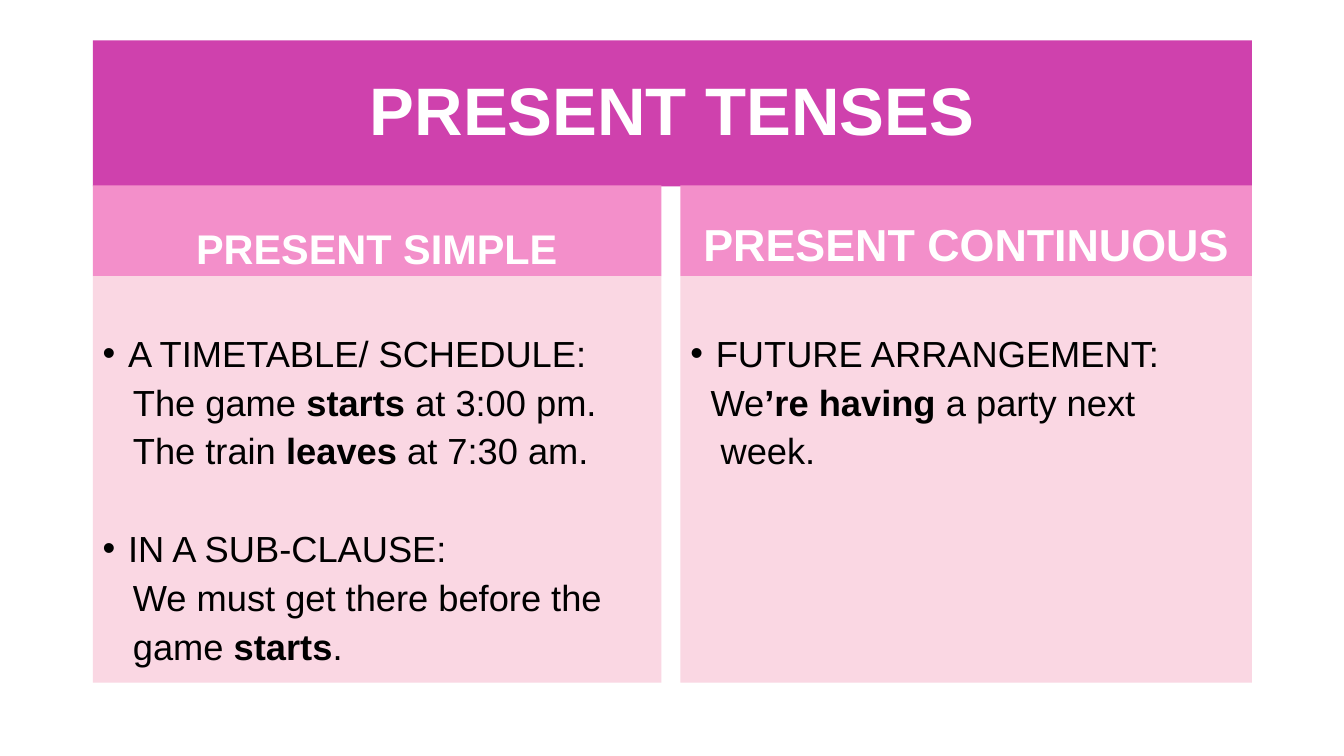
from lxml.etree import SubElement
from pptx import Presentation
from pptx.dml.color import RGBColor
from pptx.enum.shapes import MSO_SHAPE
from pptx.enum.text import MSO_ANCHOR, PP_ALIGN
from pptx.oxml.ns import qn
from pptx.util import Cm, Pt

COLORS = {"title": "CF41AD", "header": "F38FCA", "body": "FAD7E3",
          "light": "FFFFFF", "dark": "000000"}
BULLET = 0.64
SIMPLE = [
    (BULLET, 0, [("A TIMETABLE/ SCHEDULE:", False)]),
    (0.76, 10, [("The game ", False), ("starts ", True), ("at 3:00 pm.", False)]),
    (0.76, 10, [("The train ", False), ("leaves", True), (" at 7:30 am.", False)]),
    (BULLET, 45, [("IN A SUB-CLAUSE:", False)]),
    (0.76, 10, [("We must get there before the", False)]),
    (0.76, 10, [("game ", False), ("starts", True), (".", False)]),
]
CONTINUOUS = [
    (BULLET, 0, [("FUTURE ARRANGEMENT:", False)]),
    (0.51, 10, [("We", False), ("’re having ", True), ("a party next", False)]),
    (0.76, 10, [("week.", False)]),
]


def set_attrs(obj, **values):
    """Set each named format value on an object."""
    for name, value in values.items():
        setattr(obj, name, value)


def add_run(p, text, size, color, bold):
    """Append a formatted run to a paragraph."""
    r = p.add_run()
    r.text = text
    set_attrs(r.font, name="Arial", size=Pt(size), bold=bold)
    r.font.color.rgb = RGBColor.from_string(COLORS[color])


def add_panel(s, box, fill, anchor, **margins):
    """Add a filled rectangle and return its text frame."""
    sp = s.shapes.add_shape(MSO_SHAPE.RECTANGLE, *(Cm(v) for v in box))
    sp.shadow.inherit = False
    sp.fill.solid()
    sp.fill.fore_color.rgb = RGBColor.from_string(COLORS[fill])
    sp.line.fill.background()
    tf = sp.text_frame
    set_attrs(tf, word_wrap=True, vertical_anchor=anchor, **margins)
    return tf


def add_heading(s, box, fill, text, size, anchor, bottom=0.13):
    """Add a panel with one centred bold line."""
    tf = add_panel(s, box, fill, anchor, margin_bottom=Cm(bottom))
    p = tf.paragraphs[0]
    set_attrs(p, alignment=PP_ALIGN.CENTER, line_spacing=0.9)
    add_run(p, text, size, "light", True)


def add_points(s, box, points):
    """Add a panel of bulleted uses with indented examples."""
    tf = add_panel(s, box, "body", MSO_ANCHOR.TOP, margin_top=Cm(1.6))
    for i, (indent, before, runs) in enumerate(points):
        p = tf.add_paragraph() if i else tf.paragraphs[0]
        set_attrs(p, alignment=PP_ALIGN.LEFT, line_spacing=Pt(24.9),
                  space_before=Pt(before))
        pPr = p._p.get_or_add_pPr()
        pPr.set("marL", str(Cm(indent)))
        if indent == BULLET:
            pPr.set("indent", str(-Cm(indent)))
            SubElement(pPr, qn("a:buFont"), typeface="Arial")
            SubElement(pPr, qn("a:buChar"), char="•")
        for text, bold in runs:
            add_run(p, text, 25.9, "dark", bold)


def add_column(s, box, heading, size, bottom, points):
    """Add a tense column: a header above its uses."""
    left, top, width, height = box
    header = 2.29
    add_heading(s, (left, top, width, header), "header", heading, size,
                MSO_ANCHOR.BOTTOM, bottom)
    add_points(s, (left, top + header, width, height - header), points)


def main():
    """Build and save the slide."""
    prs = Presentation()
    set_attrs(prs, slide_width=Cm(33.87), slide_height=Cm(19.05))
    s = prs.slides.add_slide(prs.slide_layouts[6])
    add_heading(s, (2.34, 1.02, 29.21, 3.68), "title", "PRESENT TENSES", 48,
                MSO_ANCHOR.MIDDLE)
    add_column(s, (2.34, 4.67, 14.33, 12.53), "PRESENT SIMPLE", 29.6, 0.07, SIMPLE)
    add_column(s, (17.15, 4.67, 14.4, 12.53), "PRESENT CONTINUOUS", 32, 0.13,
               CONTINUOUS)
    prs.save("out.pptx")


if __name__ == "__main__":
    main()
